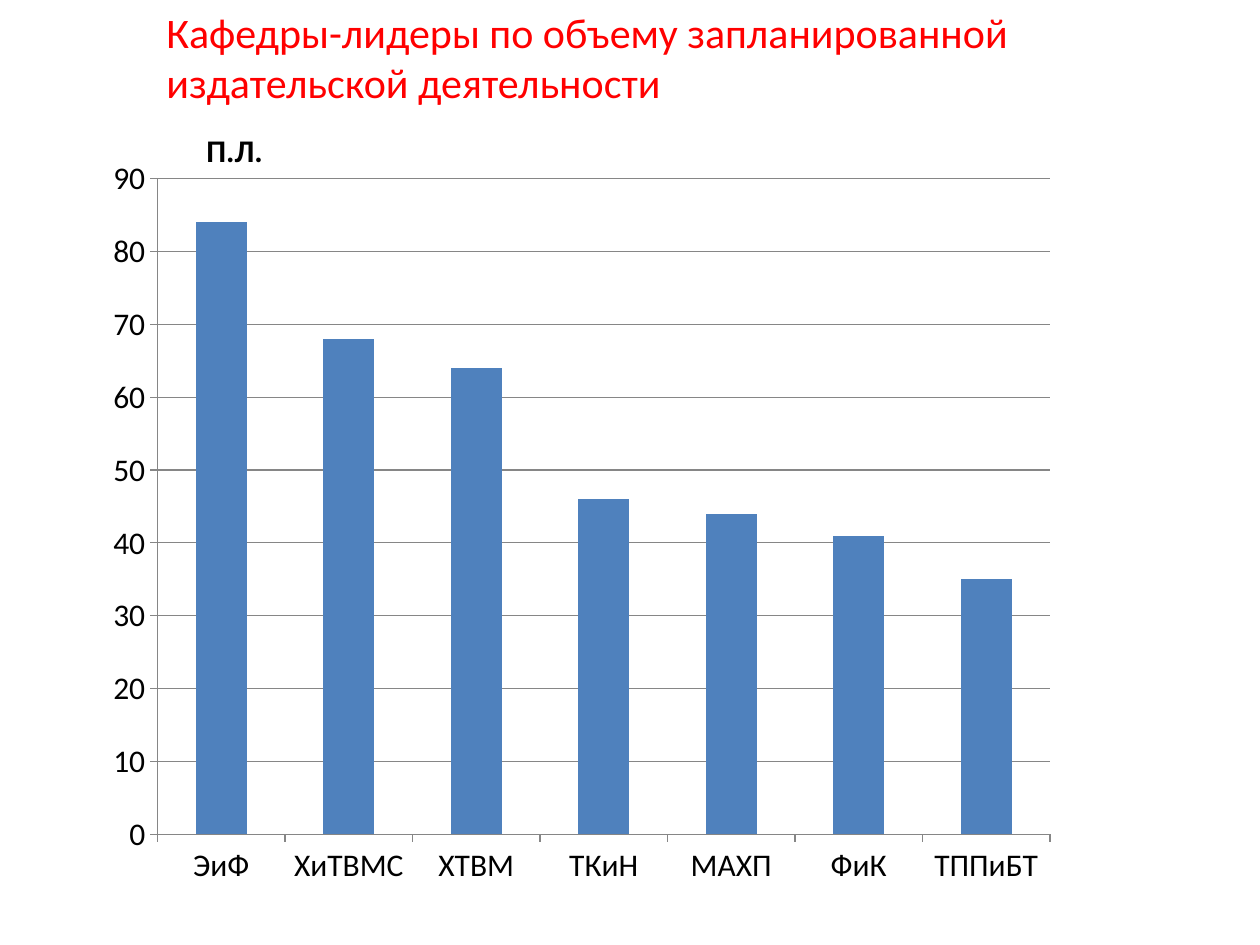
from dataclasses import dataclass

from lxml.etree import SubElement
from pptx import Presentation
from pptx.chart.axis import _BaseAxis
from pptx.chart.chart import Chart
from pptx.chart.data import CategoryChartData
from pptx.dml.color import RGBColor
from pptx.enum.chart import XL_CHART_TYPE, XL_TICK_MARK
from pptx.enum.text import MSO_ANCHOR, PP_ALIGN
from pptx.oxml.ns import qn
from pptx.slide import Slide
from pptx.text.text import TextFrame
from pptx.util import Cm, Pt


@dataclass(frozen=True)
class Theme:
    font: str = "Calibri"
    title_color: RGBColor = RGBColor(0xFF, 0x00, 0x00)
    text_color: RGBColor = RGBColor(0x00, 0x00, 0x00)
    bar_color: RGBColor = RGBColor(0x4F, 0x81, 0xBD)
    line_color: RGBColor = RGBColor(0x86, 0x86, 0x86)
    title_size: Pt = Pt(24)
    body_size: Pt = Pt(18)
    line_width: Pt = Pt(0.75)


@dataclass(frozen=True)
class Department:
    name: str
    sheets: int


THEME = Theme()
DEPARTMENTS = [
    Department("ЭиФ", 84),
    Department("ХиТВМС", 68),
    Department("ХТВМ", 64),
    Department("ТКиН", 46),
    Department("МАХП", 44),
    Department("ФиК", 41),
    Department("ТППиБТ", 35),
]
PLOT_LAYOUT = {"x": 0.065, "y": 0.045, "w": 0.915, "h": 0.87}


def write_text(frame: TextFrame, text: str, size: Pt, color: RGBColor, bold: bool) -> None:
    frame.text = text
    frame.word_wrap = True
    frame.vertical_anchor = MSO_ANCHOR.TOP
    paragraph = frame.paragraphs[0]
    paragraph.alignment = PP_ALIGN.LEFT
    paragraph.font.name = THEME.font
    paragraph.font.size = size
    paragraph.font.bold = bold
    paragraph.font.color.rgb = color


def add_title(slide: Slide) -> None:
    title = slide.shapes.title
    title.left, title.top, title.width, title.height = Cm(3.1), Cm(0), Cm(18.6), Cm(2.31)
    write_text(
        title.text_frame,
        "Кафедры-лидеры по объему запланированной издательской деятельности",
        THEME.title_size,
        THEME.title_color,
        False,
    )


def format_axis(axis: _BaseAxis) -> None:
    axis.major_tick_mark = XL_TICK_MARK.OUTSIDE
    axis.minor_tick_mark = XL_TICK_MARK.NONE
    axis.format.line.color.rgb = THEME.line_color
    axis.format.line.width = THEME.line_width


def fix_plot_layout(chart: Chart) -> None:
    plot_area = chart.element.find(".//" + qn("c:plotArea"))
    for layout in plot_area.findall(qn("c:layout")):
        plot_area.remove(layout)
    layout = SubElement(plot_area, qn("c:layout"))
    plot_area.insert(0, layout)
    manual = SubElement(layout, qn("c:manualLayout"))
    SubElement(manual, qn("c:layoutTarget")).set("val", "inner")
    for side in ("x", "y"):
        SubElement(manual, qn(f"c:{side}Mode")).set("val", "edge")
    for side, share in PLOT_LAYOUT.items():
        SubElement(manual, qn(f"c:{side}")).set("val", str(share))


def add_department_chart(slide: Slide, departments: list[Department]) -> None:
    data = CategoryChartData()
    data.categories = [department.name for department in departments]
    data.add_series("П.Л.", [department.sheets for department in departments])
    chart = slide.shapes.add_chart(
        XL_CHART_TYPE.COLUMN_CLUSTERED, Cm(1.9), Cm(2.92), Cm(19.66), Cm(15.19), data
    ).chart
    chart.has_legend = False
    chart.has_title = False
    chart.font.name = THEME.font
    chart.font.size = THEME.body_size
    chart.font.color.rgb = THEME.text_color

    plot = chart.plots[0]
    plot.gap_width = 150
    plot.vary_by_categories = False
    fill = plot.series[0].format.fill
    fill.solid()
    fill.fore_color.rgb = THEME.bar_color

    format_axis(chart.category_axis)
    value_axis = chart.value_axis
    format_axis(value_axis)
    value_axis.minimum_scale = 0
    value_axis.maximum_scale = 90
    value_axis.major_unit = 10
    value_axis.has_major_gridlines = True
    gridlines = value_axis.major_gridlines.format.line
    gridlines.color.rgb = THEME.line_color
    gridlines.width = THEME.line_width
    fix_plot_layout(chart)


def add_unit_label(slide: Slide) -> None:
    label = slide.shapes.add_textbox(Cm(3.91), Cm(2.51), Cm(2.06), Cm(1.3))
    write_text(label.text_frame, "П.Л.", THEME.body_size, THEME.text_color, True)


def main() -> None:
    presentation = Presentation()
    presentation.slide_width = Cm(25.4)
    presentation.slide_height = Cm(19.05)
    slide = presentation.slides.add_slide(presentation.slide_layouts[5])
    add_title(slide)
    add_department_chart(slide, DEPARTMENTS)
    add_unit_label(slide)
    presentation.save("out.pptx")


if __name__ == "__main__":
    main()
